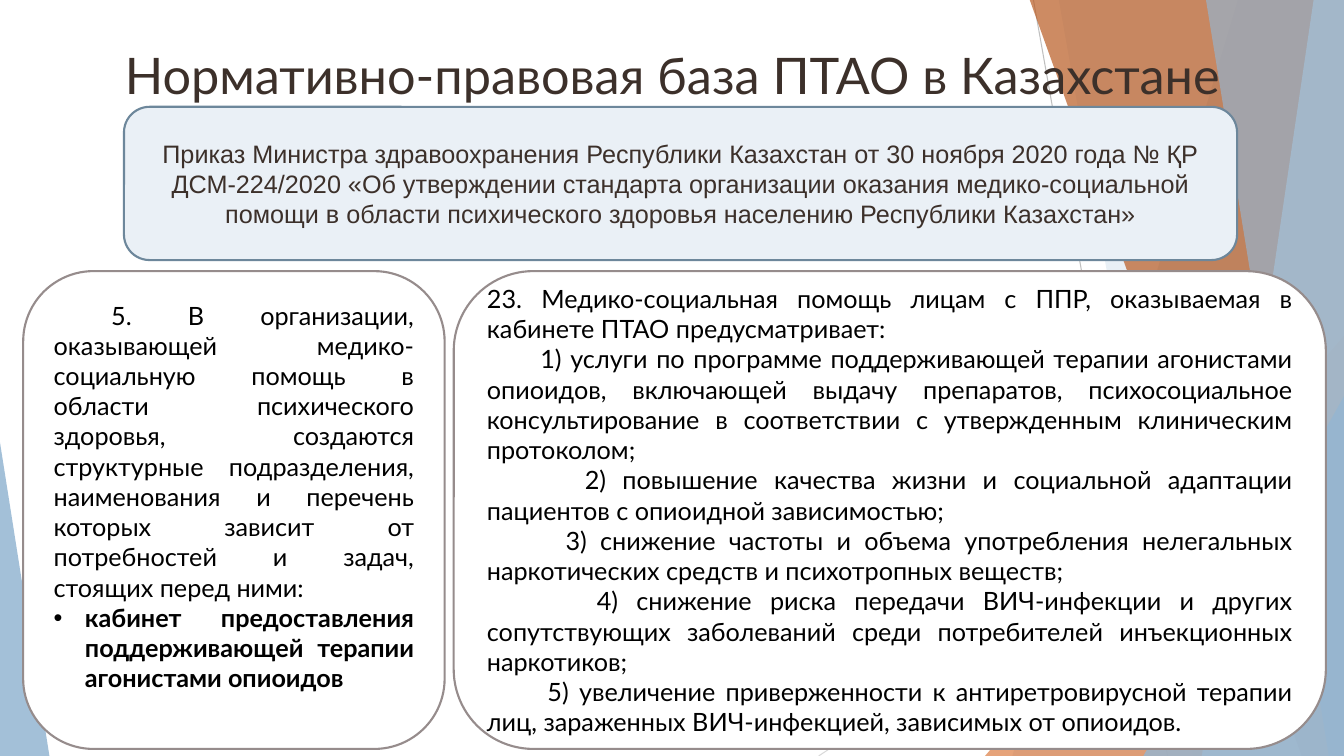
from lxml import etree
from pptx import Presentation
from pptx import util as u
from pptx.dml.color import RGBColor
from pptx.enum import shapes, text
from pptx.oxml import ns

INK = RGBColor(0x3C, 0x30, 0x2A)
BLACK = RGBColor(0, 0, 0)
WHITE = RGBColor(0xFF, 0xFF, 0xFF)
BLUE = RGBColor(0x94, 0xB6, 0xD2)
PALE_BLUE = RGBColor(0xBF, 0xD3, 0xE4)
ORANGE = RGBColor(0xDD, 0x80, 0x47)
RUST = RGBColor(0xB9, 0x5B, 0x22)
ORDER_FILL = RGBColor(0xEA, 0xF0, 0xF6)
ORDER_EDGE = RGBColor(0x6D, 0x87, 0x9B)
CARD_EDGE = RGBColor(0x96, 0x8C, 0x8C)
LIGHT_GREY = RGBColor(0xBF, 0xBF, 0xBF)
PALE_GREY = RGBColor(0xD9, 0xD9, 0xD9)

WIDTH, HEIGHT = 13.33, 7.5
TOP = -0.01
JUSTIFY = text.PP_ALIGN.JUSTIFY
CENTER = text.PP_ALIGN.CENTER


class Board:
    heading_font = "Lato"
    body_size = 18

    def __init__(self, slide):
        self.slide = slide
        self.shapes = slide.shapes

    def style(self, paragraph, font, size, color, align, bold=False):
        paragraph.alignment = align
        paragraph.font.name = font
        paragraph.font.size = u.Pt(size)
        paragraph.font.color.rgb = color
        paragraph.font.bold = bold

    def title(self, words):
        heading = self.shapes.title
        heading.left, heading.top = u.Inches(0.92), u.Inches(0.39)
        heading.width, heading.height = u.Inches(11.5), u.Inches(0.75)
        frame = heading.text_frame
        frame.text = words
        frame.word_wrap = True
        frame.auto_size = text.MSO_AUTO_SIZE.NONE
        frame.vertical_anchor = text.MSO_ANCHOR.TOP
        self.style(frame.paragraphs[0], self.heading_font, 36, INK, CENTER)
        self.shapes.element.append(heading.element)

    def line(self, start, end, color):
        ray = self.shapes.add_connector(
            shapes.MSO_CONNECTOR.STRAIGHT, *map(u.Inches, start + end))
        ray.line.color.rgb = color
        ray.line.width = u.Pt(0.75)
        etree.SubElement(ray.element.spPr, ns.qn("a:effectLst"))

    def tint(self, facet, color, opacity):
        facet.shadow.inherit = False
        facet.fill.solid()
        facet.fill.fore_color.rgb = color
        facet.line.fill.background()
        fill_color = facet.element.spPr.find(ns.qn("a:solidFill"))[0]
        alpha = etree.SubElement(fill_color, ns.qn("a:alpha"))
        alpha.set("val", str(opacity * 1000))

    def facet(self, top_x, bottom_x, color, opacity):
        builder = self.shapes.build_freeform(
            u.Inches(top_x), u.Inches(TOP), scale=1.0)
        corners = [(WIDTH, TOP), (WIDTH, HEIGHT), (bottom_x, HEIGHT)]
        builder.add_line_segments(
            [(u.Inches(x), u.Inches(y)) for x, y in corners], close=True)
        self.tint(builder.convert_to_shape(), color, opacity)

    def triangle(self, box, apex, color, opacity):
        wedge = self.shapes.add_shape(
            shapes.MSO_SHAPE.ISOSCELES_TRIANGLE, *map(u.Inches, box))
        wedge.adjustments[0] = apex
        self.tint(wedge, color, opacity)

    def card(self, box, fill, edge, items, font, color, align, bottom=0.05):
        card = self.shapes.add_shape(
            shapes.MSO_SHAPE.ROUNDED_RECTANGLE, *map(u.Inches, box))
        card.shadow.inherit = False
        card.fill.solid()
        card.fill.fore_color.rgb = fill
        card.line.color.rgb = edge
        card.line.width = u.Pt(1.5)
        frame = card.text_frame
        frame.word_wrap = True
        frame.vertical_anchor = text.MSO_ANCHOR.MIDDLE
        frame.margin_bottom = u.Inches(bottom)
        for index, (indent, words) in enumerate(items):
            paragraph = frame.add_paragraph() if index else frame.paragraphs[0]
            paragraph.text = words
            bulleted = indent < 0
            self.style(paragraph, font, self.body_size, color, align, bulleted)
            self.indent(paragraph, indent)

    def indent(self, paragraph, indent):
        properties = paragraph._p.get_or_add_pPr()
        properties.set("marL", str(u.Inches(max(-indent, 0))))
        properties.set("indent", str(u.Inches(indent)))
        if indent < 0:
            etree.SubElement(properties, ns.qn("a:buFont")).set("typeface", "Arial")
            bullet = etree.SubElement(properties, ns.qn("a:buChar"))
            bullet.set("char", "•")
            properties.append(properties.find(ns.qn("a:defRPr")))


ORDER = [(0, "Приказ Министра здравоохранения Республики Казахстан от 30 ноября 2020 года № ҚР ДСМ-224/2020 «Об утверждении стандарта организации оказания медико-социальной помощи в области психического здоровья населению Республики Казахстан»")]
SERVICES = [
    (0, "23. Медико-социальная помощь лицам с ППР, оказываемая в кабинете ПТАО предусматривает:"),
    (0.53, "1) услуги по программе поддерживающей терапии агонистами опиоидов, включающей выдачу препаратов, психосоциальное консультирование в соответствии с утвержденным клиническим протоколом;"),
    (0.97, "2) повышение качества жизни и социальной адаптации пациентов с опиоидной зависимостью;"),
    (0.78, "3) снижение частоты и объема употребления нелегальных наркотических средств и психотропных веществ;"),
    (1.09, "4) снижение риска передачи ВИЧ-инфекции и других сопутствующих заболеваний среди потребителей инъекционных наркотиков;"),
    (0.6, "5) увеличение приверженности к антиретровирусной терапии лиц, зараженных ВИЧ-инфекцией, зависимых от опиоидов."),
]
DIVISIONS = [
    (0.57, "5. В организации, оказывающей медико-социальную помощь в области психического здоровья, создаются структурные подразделения, наименования и перечень которых зависит от потребностей и задач, стоящих перед ними:"),
    (-0.31, "кабинет предоставления поддерживающей терапии агонистами опиоидов"),
]


def main():
    deck = Presentation()
    deck.slide_width, deck.slide_height = u.Inches(WIDTH), u.Inches(HEIGHT)
    board = Board(deck.slides.add_slide(deck.slide_layouts[5]))

    board.line((10.25, 0), (11.58, HEIGHT), LIGHT_GREY)
    board.line((WIDTH, 4.03), (8.12, HEIGHT), PALE_GREY)
    board.facet(12.28, 10.04, BLUE, 30)
    board.facet(10.5, 11.83, BLUE, 20)
    board.triangle((9.77, 3.33, 3.56, 4.17), 1, ORANGE, 72)
    board.facet(10.21, 12.91, RUST, 70)
    board.facet(13.03, 11.92, PALE_BLUE, 70)
    board.facet(11.96, 13.18, BLUE, 65)
    board.triangle((11.34, 3.93, 1.99, 3.57), 1, BLUE, 80)
    board.triangle((0, 4.39, 0.49, 3.11), 0, BLUE, 85)

    board.card((1.23, 1.06, 11.04, 1.52), ORDER_FILL, ORDER_EDGE,
               ORDER, "Arial", INK, CENTER)
    board.title("Нормативно-правовая база ПТАО в Казахстане")
    board.card((4.5, 2.69, 8.65, 4.74), WHITE, CARD_EDGE,
               SERVICES, "Lato", BLACK, JUSTIFY)
    board.card((0.23, 2.69, 4.18, 4.74), WHITE, CARD_EDGE,
               DIVISIONS, "Lato", BLACK, JUSTIFY, bottom=0.32)
    deck.save("out.pptx")


if __name__ == "__main__":
    main()
